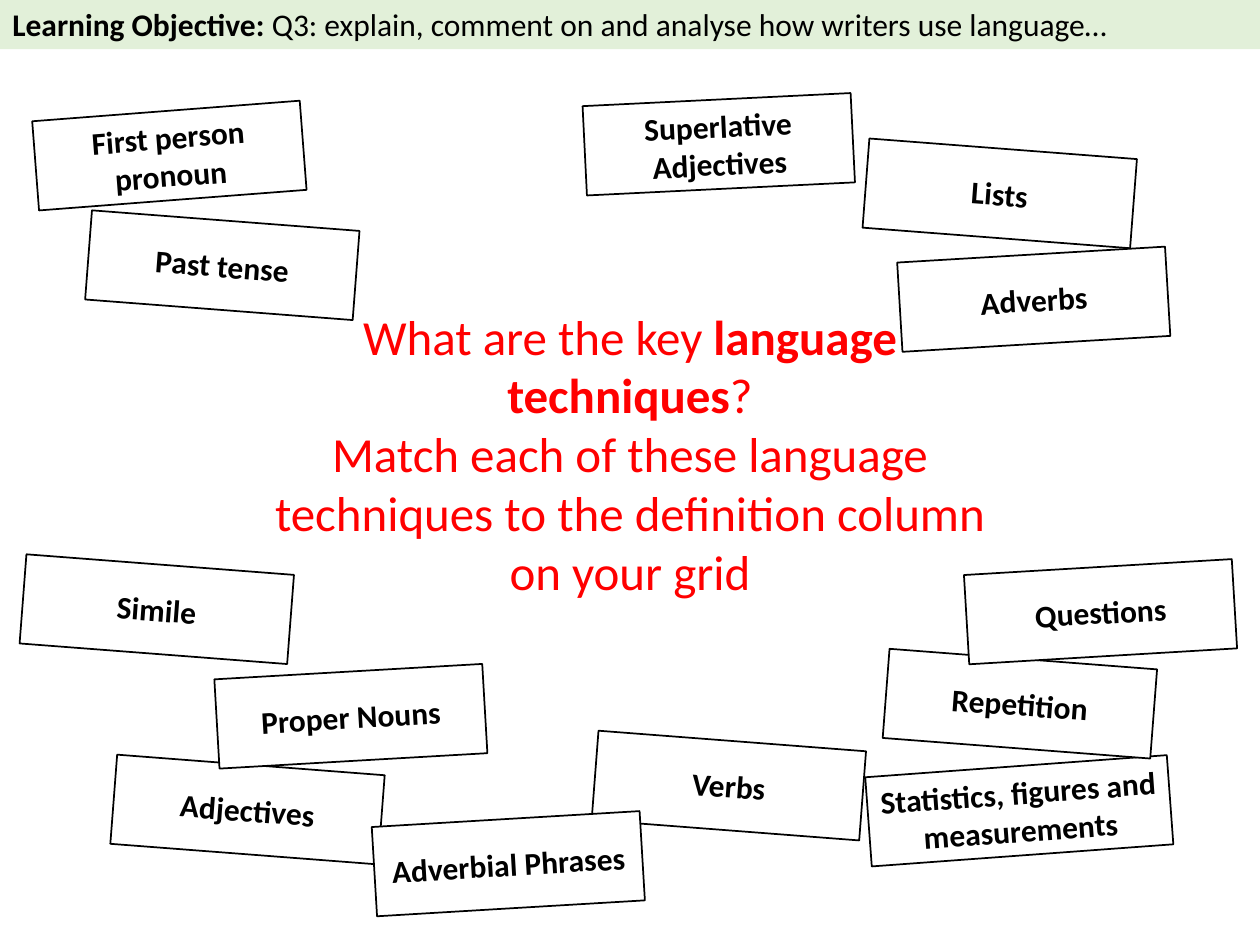
"""Build a slide of scattered language-technique cards around a matching task."""
from dataclasses import dataclass

import pptx
import pptx.dml.color
import pptx.enum.shapes
import pptx.enum.text
import pptx.shapes.autoshape
import pptx.slide
import pptx.text.text
import pptx.util

Inches = pptx.util.Inches
Pt = pptx.util.Pt
RGBColor = pptx.dml.color.RGBColor
ALIGN = pptx.enum.text.PP_ALIGN
ANCHOR = pptx.enum.text.MSO_ANCHOR

BLACK = RGBColor(0x00, 0x00, 0x00)
WHITE = RGBColor(0xFF, 0xFF, 0xFF)
RED = RGBColor(0xFF, 0x00, 0x00)
PALE_GREEN = RGBColor(0xE2, 0xF0, 0xD9)
FONT = "Calibri"
CARD_HEIGHT = 0.71
TILT_RIGHT = 4.4
TILT_LEFT = -3.4


@dataclass(frozen=True)
class Card:
    label: str
    left: float
    top: float
    tilt: float
    width: float = 2.13


@dataclass(frozen=True)
class Span:
    text: str
    bold: bool = False


CARDS = (
    Card("First person pronoun", 0.28, 0.88, -4.4),
    Card("Adjectives", 0.9, 6.07, TILT_RIGHT),
    Card("Statistics, figures and measurements", 6.89, 6.08, -4.2, 2.4),
    Card("Past tense", 0.7, 1.75, TILT_RIGHT),
    Card("Verbs", 4.72, 5.88, TILT_RIGHT),
    Card("Lists", 6.87, 1.18, TILT_RIGHT),
    Card("Repetition", 7.03, 5.23, TILT_RIGHT),
    Card("Proper Nouns", 1.72, 5.33, -3.3),
    Card("Adverbs", 7.14, 2.02, TILT_LEFT),
    Card("Superlative Adjectives", 4.64, 0.79, -2.8),
    Card("Adverbial Phrases", 2.97, 6.5, TILT_LEFT),
    Card("Simile", 0.18, 4.48, TILT_RIGHT),
    Card("Questions", 7.67, 4.5, TILT_LEFT),
)
TASK = (
    (Span("What are the key "), Span("language techniques", True), Span("?")),
    (Span("Match each of these language techniques to the definition column on your grid"),),
)
OBJECTIVE = (
    Span("Learning Objective: ", True),
    Span("Q3: explain, comment on and analyse how writers use language…"),
)


def write_paragraph(para: pptx.text.text._Paragraph, spans: tuple[Span, ...],
                    size: int, color: RGBColor, align: ALIGN) -> None:
    para.alignment = align
    para.font.name = FONT
    para.font.size = Pt(size)
    para.font.color.rgb = color
    for span in spans:
        run = para.add_run()
        run.text = span.text
        run.font.bold = span.bold


def add_rectangle(page: pptx.slide.Slide, left: float, top: float, width: float,
                  height: float, fill: RGBColor) -> pptx.shapes.autoshape.Shape:
    box = page.shapes.add_shape(
        pptx.enum.shapes.MSO_SHAPE.RECTANGLE,
        Inches(left), Inches(top), Inches(width), Inches(height))
    box.shadow.inherit = False
    box.fill.solid()
    box.fill.fore_color.rgb = fill
    box.text_frame.word_wrap = True
    return box


def add_task(page: pptx.slide.Slide) -> None:
    box = page.shapes.add_textbox(Inches(1.97), Inches(2.38), Inches(6.06), Inches(2.46))
    frame = box.text_frame
    frame.word_wrap = True
    for index, spans in enumerate(TASK):
        para = frame.add_paragraph() if index else frame.paragraphs[0]
        write_paragraph(para, spans, 28, RED, ALIGN.CENTER)


def add_card(page: pptx.slide.Slide, card: Card) -> None:
    box = add_rectangle(page, card.left, card.top, card.width, CARD_HEIGHT, WHITE)
    box.rotation = card.tilt
    box.line.color.rgb = BLACK
    box.line.width = Pt(1)
    box.text_frame.vertical_anchor = ANCHOR.MIDDLE
    write_paragraph(box.text_frame.paragraphs[0], (Span(card.label, True),),
                    18, BLACK, ALIGN.CENTER)


def add_objective(page: pptx.slide.Slide) -> None:
    box = add_rectangle(page, 0, -0.01, 10, 0.4, PALE_GREEN)
    box.line.fill.background()
    box.text_frame.vertical_anchor = ANCHOR.TOP
    write_paragraph(box.text_frame.paragraphs[0], OBJECTIVE, 18, BLACK, ALIGN.LEFT)


def main() -> None:
    deck = pptx.Presentation()
    deck.slide_width = Inches(10)
    deck.slide_height = Inches(7.5)
    page = deck.slides.add_slide(deck.slide_layouts[6])
    add_task(page)
    for card in CARDS:
        add_card(page, card)
    add_objective(page)
    deck.save("out.pptx")


if __name__ == "__main__":
    main()
